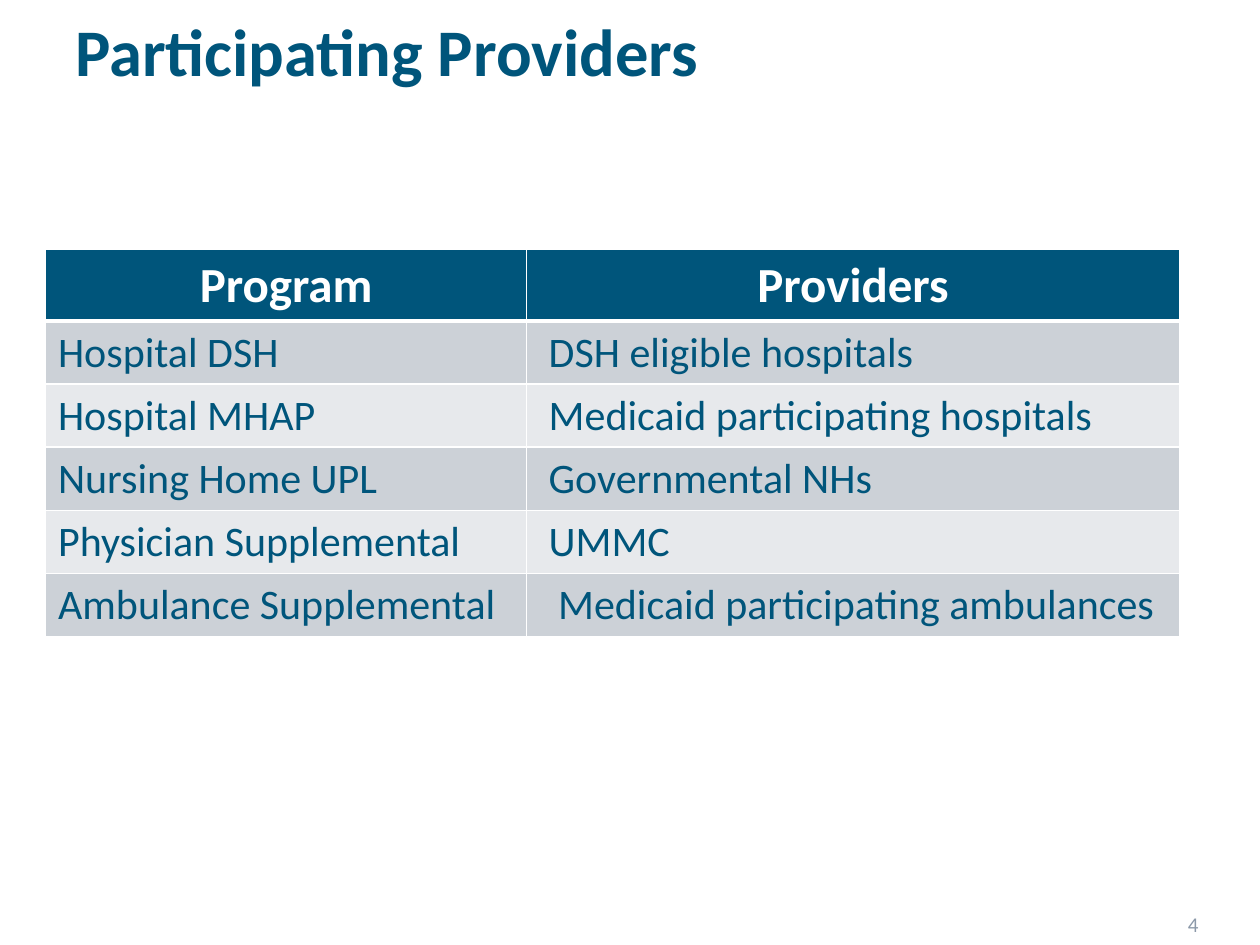
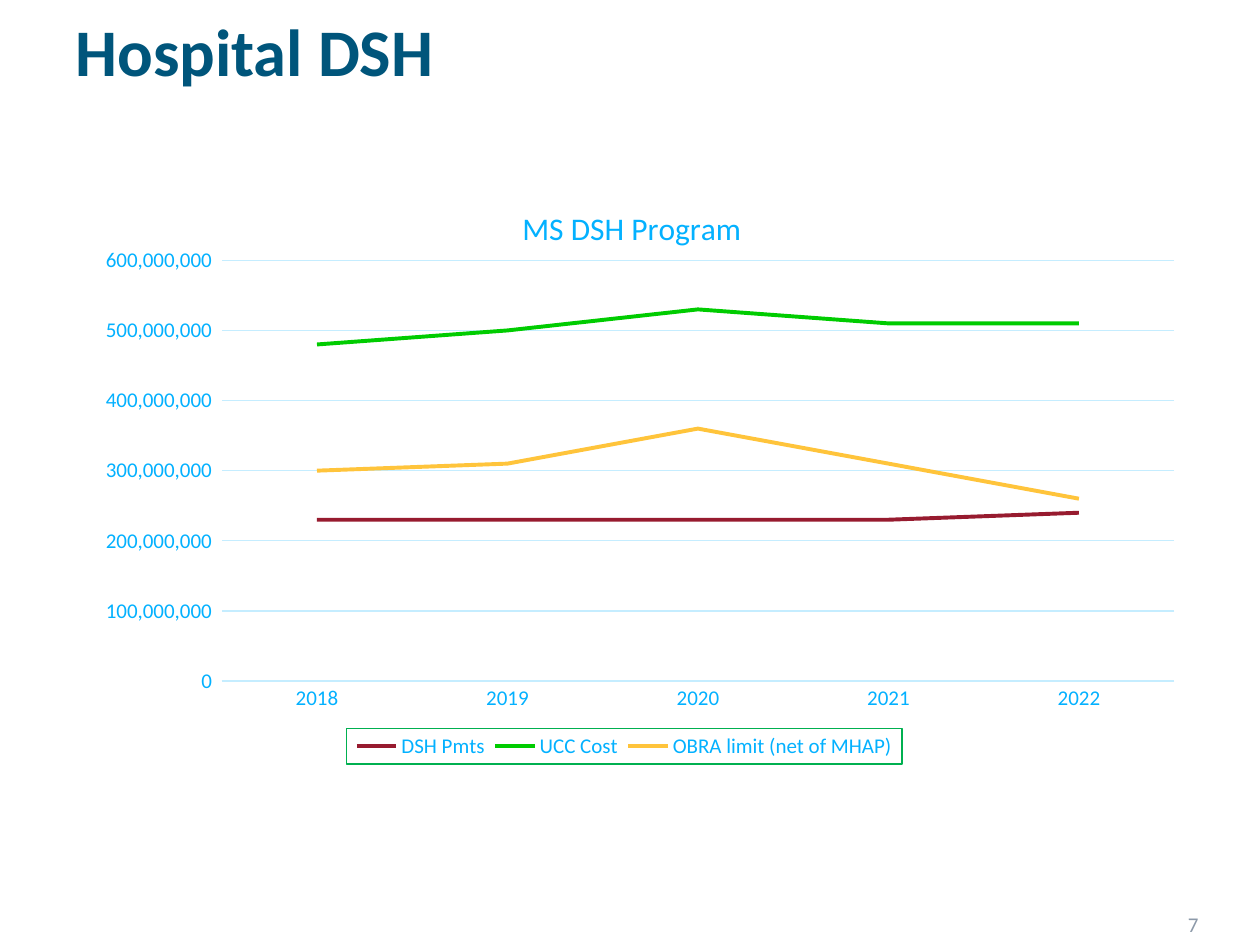
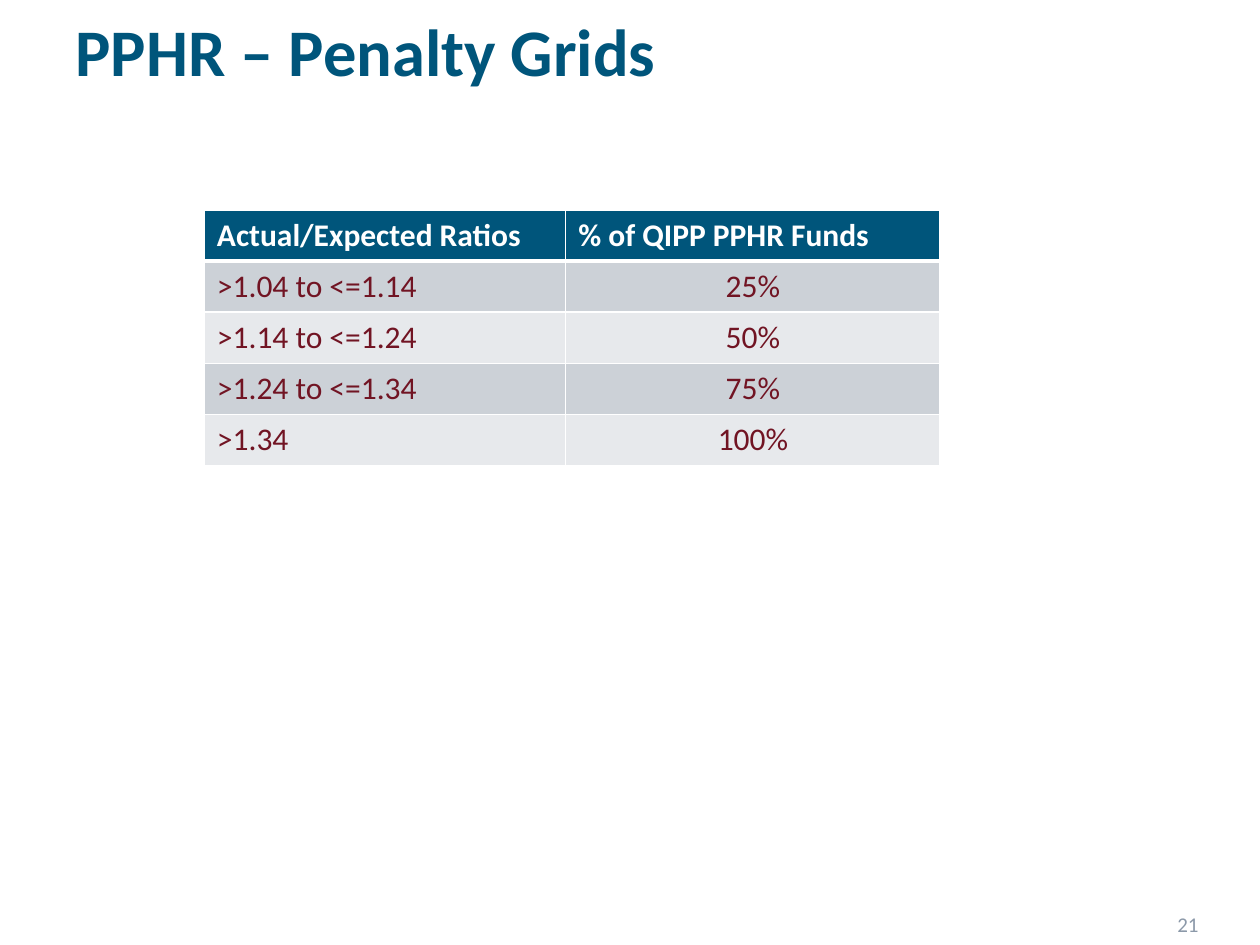
from dataclasses import dataclass, field

from pptx import Presentation
from pptx.chart.data import CategoryChartData
from pptx.dml.color import RGBColor
from pptx.enum.chart import XL_CHART_TYPE, XL_LEGEND_POSITION, XL_TICK_MARK
from pptx.enum.text import MSO_ANCHOR, PP_ALIGN
from pptx.oxml import parse_xml
from pptx.oxml.ns import nsdecls, qn
from pptx.util import Pt

COLORS = {
    "navy": "00557B", "white": "FFFFFF", "gray": "8C99A9",
    "band_dark": "CCD1D7", "band_light": "E7E9EC",
    "maroon": "711423", "sky": "03B1FF", "pale_sky": "C5EDFF",
    "red": "971B2F", "green": "00CC00", "amber": "FFC43B",
    "legend_border": "00B050",
}
FONT = "Calibri"
LEFT, CENTER, RIGHT = PP_ALIGN.LEFT, PP_ALIGN.CENTER, PP_ALIGN.RIGHT


@dataclass
class TextStyle:
    size: float
    color: str
    bold: bool = False
    align: PP_ALIGN = LEFT


@dataclass
class Box:
    left: float
    top: float
    width: float
    height: float

    def points(self) -> list:
        return [Pt(v) for v in (self.left, self.top, self.width, self.height)]


@dataclass
class Grid:
    left: float
    top: float
    col_widths: list
    header_height: float
    row_height: float
    rows: list
    header: TextStyle
    columns: list
    margins: dict = field(default_factory=dict)  # left margin by (row, column)


@dataclass
class Line:
    name: str
    color: str
    millions: list


TITLE = TextStyle(38, "navy", bold=True)
PAGE_NUMBER = TextStyle(12, "gray", align=RIGHT)
AXIS = TextStyle(12, "sky")
CHART_TITLE = TextStyle(18, "sky")
TITLE_BOX = Box(36, 0, 648, 57)
NUMBER_BOX = Box(507, 516, 185, 24)


# Shared text and slide parts
def rgb(name: str) -> RGBColor:
    return RGBColor.from_string(COLORS[name])


def set_font(font, style: TextStyle) -> None:
    formats = {"name": FONT, "size": Pt(style.size), "bold": style.bold}
    for key, value in formats.items():
        setattr(font, key, value)
    font.color.rgb = rgb(style.color)


def write(tf, text: str, style: TextStyle) -> None:
    p = tf.paragraphs[0]
    p.alignment = style.align
    r = p.add_run()
    r.text = text
    set_font(r.font, style)


def add_text(s, box: Box, text: str, style: TextStyle) -> None:
    tf = s.shapes.add_textbox(*box.points()).text_frame
    tf.word_wrap = True
    tf.vertical_anchor = MSO_ANCHOR.MIDDLE
    write(tf, text, style)


def add_slide(prs, title: str, number: int):
    s = prs.slides.add_slide(prs.slide_layouts[6])
    add_text(s, NUMBER_BOX, str(number), PAGE_NUMBER)
    add_text(s, TITLE_BOX, title, TITLE)
    return s


# Tables
def set_borders(cell, row: int) -> None:
    widths = {"L": 1, "R": 1, "T": 3 if row == 1 else 1, "B": 3 if row == 0 else 1}
    for side, width in widths.items():
        cell._tc.get_or_add_tcPr().append(parse_xml(
            f'<a:ln{side} {nsdecls("a")} w="{Pt(width)}"><a:solidFill>'
            f'<a:srgbClr val="{COLORS["white"]}"/></a:solidFill></a:ln{side}>'))


def add_grid(s, grid: Grid) -> None:
    n_rows, n_cols = len(grid.rows), len(grid.col_widths)
    height = grid.header_height + grid.row_height * (n_rows - 1)
    box = Box(grid.left, grid.top, sum(grid.col_widths), height)
    table = s.shapes.add_table(n_rows, n_cols, *box.points()).table
    for column, width in zip(table.columns, grid.col_widths):
        column.width = Pt(width)
    for i, texts in enumerate(grid.rows):
        table.rows[i].height = Pt(grid.row_height if i else grid.header_height)
        band = "band_dark" if i % 2 else "band_light"
        for j, text in enumerate(texts):
            cell = table.cell(i, j)
            set_borders(cell, i)
            cell.fill.solid()
            cell.fill.fore_color.rgb = rgb(band if i else "navy")
            cell.margin_left = Pt(grid.margins.get((i, j), 7.2))
            write(cell.text_frame, text, grid.columns[j] if i else grid.header)


# Line chart
def place(element, index: int, inner: bool = False, **fractions: float) -> None:
    """Give a chart part a fixed place, in fractions of the chart."""
    old = element.find(qn("c:layout"))
    if old is not None:
        element.remove(old)
    target = '<c:layoutTarget val="inner"/>' if inner else ""
    modes = "".join(f'<c:{k}Mode val="edge"/>' for k in "xy")
    values = "".join(f'<c:{k} val="{v}"/>' for k, v in fractions.items())
    element.insert(index, parse_xml(
        f'<c:layout {nsdecls("c")}><c:manualLayout>{target}{modes}{values}'
        '</c:manualLayout></c:layout>'))


def set_line(line, color: str, width: float) -> None:
    line.color.rgb = rgb(color)
    line.width = Pt(width)


def add_line_chart(s, box: Box, title: str, years: list, lines: list) -> None:
    data = CategoryChartData(number_format="#,##0")
    data.categories = years
    for line in lines:
        data.add_series(line.name, [m * 1_000_000 for m in line.millions])
    chart = s.shapes.add_chart(XL_CHART_TYPE.LINE, *box.points(), data).chart
    set_font(chart.font, TextStyle(10, "navy"))
    plot = chart.plots[0]
    plot.vary_by_categories = False
    for series, line in zip(plot.series, lines):
        series.smooth = False
        set_line(series.format.line, line.color, 2.25)

    # Title and plot area
    chart.has_title = True
    write(chart.chart_title.text_frame, title, CHART_TITLE)
    place(chart.chart_title._element, 1, x=0.4, y=0.05)
    place(chart._chartSpace.chart.plotArea, 0, inner=True,
          x=0.14, y=0.15, w=0.84, h=0.71)

    # Axes
    for axis in (chart.category_axis, chart.value_axis):
        axis.major_tick_mark = axis.minor_tick_mark = XL_TICK_MARK.NONE
        set_font(axis.tick_labels.font, AXIS)
    set_line(chart.category_axis.format.line, "pale_sky", 0.75)
    values = chart.value_axis
    values.format.line.fill.background()
    values.minimum_scale, values.maximum_scale = 0, 600_000_000
    values.major_unit = 100_000_000
    set_line(values.major_gridlines.format.line, "pale_sky", 0.75)
    values.tick_labels.number_format = r"#,##0_);\(#,##0\)"
    values.tick_labels.number_format_is_linked = False

    # Legend
    chart.has_legend = True
    legend = chart.legend
    legend.position = XL_LEGEND_POSITION.BOTTOM
    legend.include_in_layout = False
    set_font(legend.font, AXIS)
    place(legend._element, 1, x=0.25, y=0.94, w=0.49, h=0.06)
    legend._element.find(qn("c:overlay")).addnext(parse_xml(
        f'<c:spPr {nsdecls("c", "a")}><a:ln w="{Pt(0.75)}"><a:solidFill>'
        f'<a:srgbClr val="{COLORS["legend_border"]}"/></a:solidFill></a:ln></c:spPr>'))


# Slide content
PROVIDERS = Grid(
    left=26, top=142.5, col_widths=[275, 373], header_height=41, row_height=36,
    rows=[
        ("Program", "Providers"),
        ("Hospital DSH", "DSH eligible hospitals"),
        ("Hospital MHAP", "Medicaid participating hospitals"),
        ("Nursing Home UPL", "Governmental NHs"),
        ("Physician Supplemental", "UMMC"),
        ("Ambulance Supplemental", "Medicaid participating ambulances"),
    ],
    header=TextStyle(28, "white", bold=True, align=CENTER),
    columns=[TextStyle(24, "navy")] * 2,
    margins={**{(i, 1): 12.6 for i in range(1, 5)}, (5, 1): 18},
)
PENALTIES = Grid(
    left=116.8, top=120, col_widths=[206.5, 214], header_height=29.2, row_height=29.2,
    rows=[
        ("Actual/Expected Ratios", "% of QIPP PPHR Funds"),
        (">1.04 to <=1.14", "25%"),
        (">1.14 to <=1.24", "50%"),
        (">1.24 to <=1.34", "75%"),
        (">1.34", "100%"),
    ],
    header=TextStyle(18, "white", bold=True),
    columns=[TextStyle(18, "maroon"), TextStyle(18, "maroon", align=CENTER)],
)
YEARS = ["2018", "2019", "2020", "2021", "2022"]
DSH_LINES = [
    Line("DSH Pmts", "red", [230, 230, 230, 230, 240]),
    Line("UCC Cost", "green", [480, 500, 530, 510, 510]),
    Line("OBRA limit (net of MHAP)", "amber", [300, 310, 360, 310, 260]),
]


def main() -> None:
    prs = Presentation()
    prs.slide_width, prs.slide_height = Pt(720), Pt(540)

    add_grid(add_slide(prs, "Participating Providers", 4), PROVIDERS)
    add_line_chart(add_slide(prs, "Hospital DSH", 7), Box(36, 98, 648, 339),
                   "MS DSH Program", YEARS, DSH_LINES)
    add_grid(add_slide(prs, "PPHR – Penalty Grids", 21), PENALTIES)

    prs.save("out.pptx")


if __name__ == "__main__":
    main()
